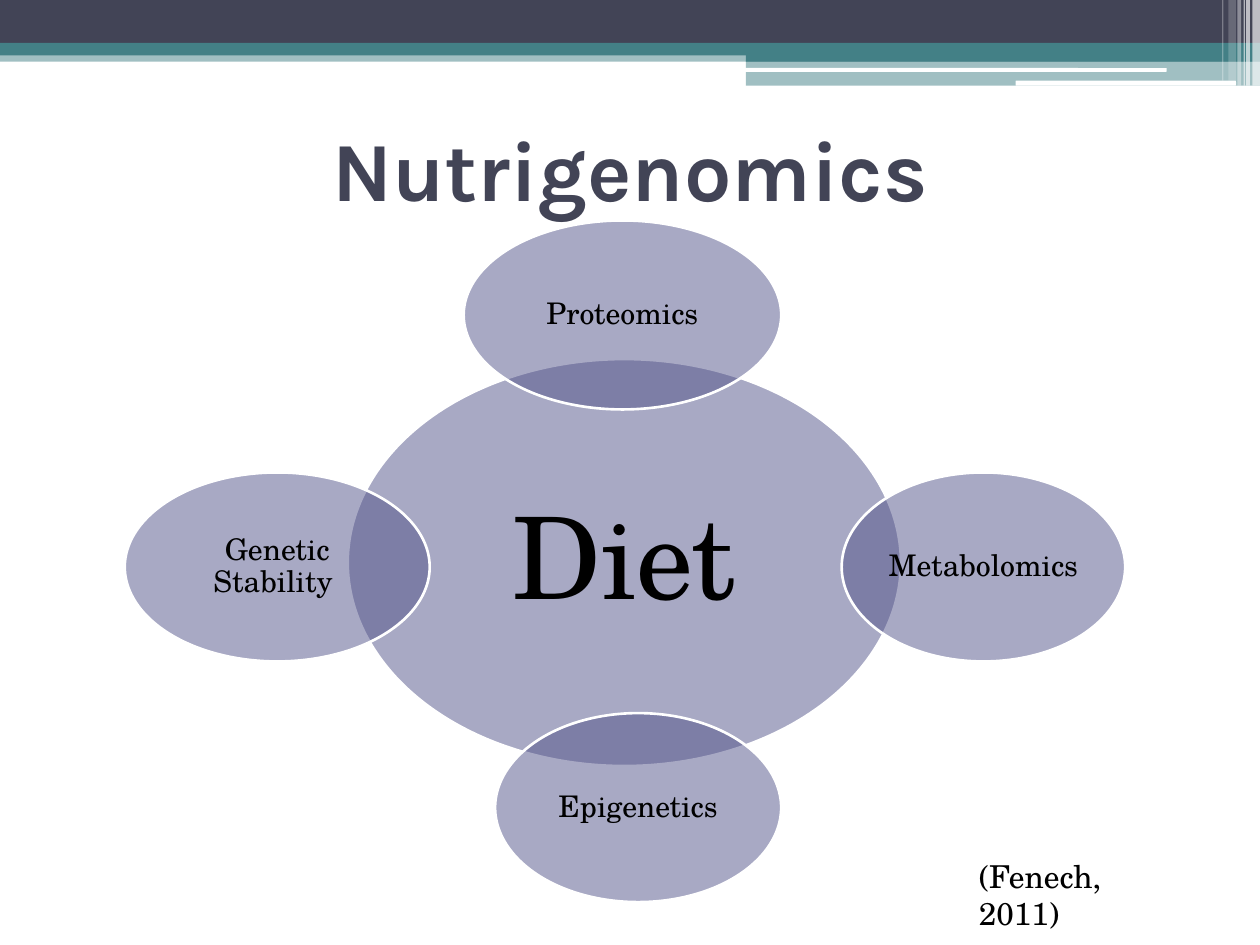
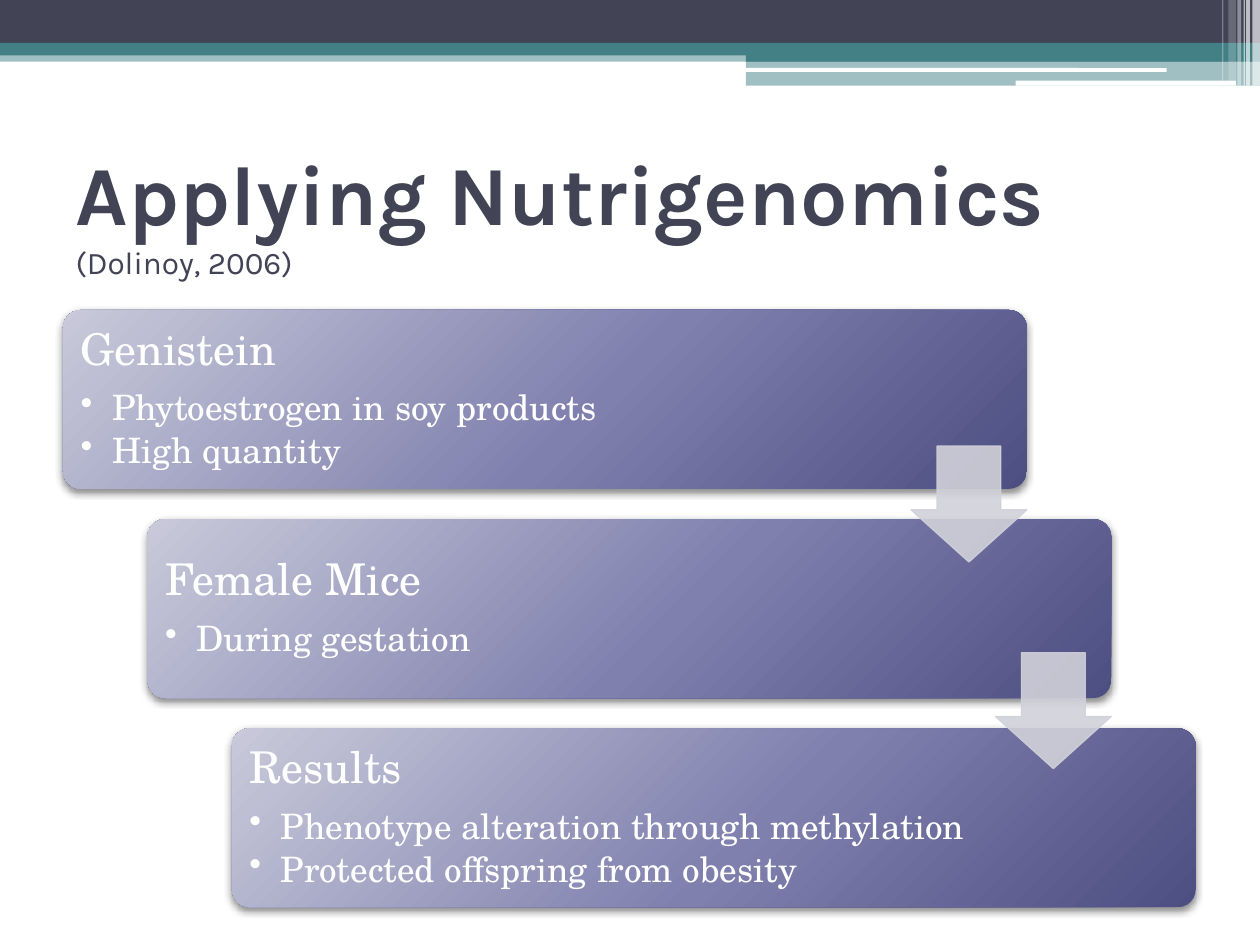
from dataclasses import dataclass

from pptx import Presentation
from pptx.dml.color import RGBColor
from pptx.enum.shapes import MSO_SHAPE
from pptx.enum.text import MSO_ANCHOR, MSO_AUTO_SIZE, PP_ALIGN
from pptx.oxml import parse_xml
from pptx.oxml.ns import nsdecls, qn
from pptx.util import Inches, Pt


@dataclass(frozen=True)
class Theme:
    dark: str = "424456"
    teal: str = "438086"
    white: str = "FFFFFF"
    black: str = "000000"
    violet: str = "53548A"
    arrow: str = "D1D1DA"
    blend: tuple = ((0, "C9C9DA"), (55, "7F80AE"), (100, "4D4E81"))
    head: str = "Karla"
    body: str = "TeX Gyre Schola"
    title: int = 48
    hub: int = 65
    orbit: int = 17
    note: int = 18
    card: int = 25
    point: int = 20


class Deck:
    def __init__(self, theme):
        self.theme = theme
        self.show = Presentation()
        self.show.slide_width = Inches(10)
        self.show.slide_height = Inches(7.5)
        self.layout = self.show.slide_layouts[5]
        self.slide = None

    def begin(self):
        self.slide = self.show.slides.add_slide(self.layout)

    def paint(self, shape, fill, tone, alpha=100):
        fill.solid()
        fill.fore_color.rgb = RGBColor.from_string(tone)
        if alpha < 100:
            color = list(shape._element.spPr.iter(qn("a:srgbClr")))[-1]
            color.append(parse_xml(f'<a:alpha {nsdecls("a")} val="{alpha * 1000}"/>'))

    def shape(self, kind, box, tone, alpha=100):
        item = self.slide.shapes.add_shape(kind, *map(Inches, box))
        item.shadow.inherit = False
        self.paint(item, item.fill, tone, alpha)
        item.line.fill.background()
        return item

    def edge(self, item, tone, width, alpha=100):
        self.paint(item, item.line.fill, tone, alpha)
        item.line.width = Pt(width)

    def bands(self):
        t = self.theme
        flat, round_ = MSO_SHAPE.RECTANGLE, MSO_SHAPE.ROUNDED_RECTANGLE
        rows = [
            (flat, (0, 0.4, 10, 0.09), t.teal, 50),
            (flat, (0, 0, 10, 0.34), t.dark, 100),
            (flat, (0, 0.34, 10, 0.1), t.teal, 100),
            (flat, (5.92, 0.39, 4.08, 0.1), t.teal, 100),
            (flat, (5.92, 0.48, 4.08, 0.2), t.teal, 50),
            (round_, (5.91, 0.54, 3.35, 0.03), t.white, 100),
            (round_, (8.06, 0.64, 1.75, 0.04), t.white, 100),
        ]
        stripes = [
            (9.94, 0.06, 0.68, 65), (9.89, 0.03, 0.68, 65), (9.87, 0.01, 0.68, 60),
            (9.82, 0.03, 0.68, 40), (9.75, 0.06, 0.64, 20), (9.7, 0.01, 0.64, 30),
        ]
        rows += [(flat, (x, 0, w, h), t.white, a) for x, w, h, a in stripes]
        for mark, row in enumerate(rows, 100):
            node = self.shape(*row)._element
            node.nvSpPr.cNvPr.set("id", str(mark))
            self.layout.shapes._spTree.append(node)

    def text(self, para, words, size, tone, font=None, bold=False):
        run = para.add_run()
        run.text = words
        run.font.name = font or self.theme.body
        run.font.size = Pt(size)
        run.font.bold = bold
        run.font.color.rgb = RGBColor.from_string(tone)

    def title(self, top, words, align, cite=None):
        t = self.theme
        item = self.slide.shapes.title
        item.left, item.top, item.width, item.height = map(Inches, (0.5, top, 9, 1.17))
        frame = item.text_frame
        frame.auto_size = MSO_AUTO_SIZE.NONE
        frame.vertical_anchor = MSO_ANCHOR.MIDDLE
        para = frame.paragraphs[0]
        para.alignment = align
        self.text(para, words, t.title, t.dark, t.head, True)
        if cite:
            para = frame.add_paragraph()
            para.alignment = align
            self.text(para, cite, t.note, t.dark, t.head)

    def frame(self, item, pad, right=None):
        frame = item.text_frame
        frame.word_wrap = True
        frame.vertical_anchor = MSO_ANCHOR.MIDDLE
        frame.margin_left = frame.margin_top = frame.margin_bottom = Inches(pad)
        frame.margin_right = Inches(right or pad)
        return frame

    def oval(self, box, words, size, pad=0.02):
        t = self.theme
        item = self.shape(MSO_SHAPE.OVAL, box, t.violet, 50)
        self.edge(item, t.white, 1.5)
        para = self.frame(item, pad).paragraphs[0]
        para.alignment = PP_ALIGN.CENTER
        para.line_spacing = 0.9
        self.text(para, words, size, t.black)

    def note(self, box, words):
        item = self.slide.shapes.add_textbox(*map(Inches, box))
        item.text_frame.word_wrap = True
        self.text(item.text_frame.paragraphs[0], words, self.theme.note, self.theme.black)

    def blend(self, item):
        stops = "".join(
            f'<a:gs pos="{at * 1000}"><a:srgbClr val="{tone}"/></a:gs>'
            for at, tone in self.theme.blend
        )
        props = item._element.spPr
        props.replace(props.find(qn("a:solidFill")), parse_xml(
            f'<a:gradFill {nsdecls("a")} rotWithShape="1"><a:gsLst>{stops}</a:gsLst>'
            '<a:path path="circle"><a:fillToRect l="-40000" t="-90000" '
            'r="140000" b="190000"/></a:path></a:gradFill>'))

    def shade(self, item):
        item._element.spPr.find(qn("a:effectLst")).append(parse_xml(
            f'<a:outerShdw {nsdecls("a")} blurRad="{Pt(4)}" dist="{Pt(2)}" '
            f'dir="5400000" rotWithShape="0"><a:srgbClr val="{self.theme.black}">'
            '<a:alpha val="45000"/></a:srgbClr></a:outerShdw>'))

    def card(self, box, head, points):
        t = self.theme
        item = self.shape(MSO_SHAPE.ROUNDED_RECTANGLE, box, t.violet)
        item.adjustments[0] = 0.1
        self.blend(item)
        self.shade(item)
        frame = self.frame(item, 0.1, 1.5)
        para = frame.paragraphs[0]
        para.space_after = Pt(9)
        self.text(para, head, t.card, t.white)
        for point in points:
            para = frame.add_paragraph()
            para.level = 1
            para.space_after = Pt(3)
            self.text(para, point, t.point, t.white)
            props = para._p.get_or_add_pPr()
            props.set("marL", str(Inches(0.25)))
            props.set("indent", str(-Inches(0.25)))
            props.append(parse_xml(f'<a:buChar {nsdecls("a")} char="•"/>'))
        for para in frame.paragraphs:
            para.alignment = PP_ALIGN.LEFT
            para.line_spacing = 0.9

    def arrow(self, box):
        tone = self.theme.arrow
        item = self.shape(MSO_SHAPE.DOWN_ARROW, box, tone, 90)
        item.adjustments[0] = 0.55
        item.adjustments[1] = 0.45
        self.edge(item, tone, 0.75, 90)


def diet(deck):
    deck.begin()
    deck.bands()
    deck.title(0.75, "Nutrigenomics", PP_ALIGN.CENTER)
    deck.oval((2.76, 2.85, 4.39, 3.23), "Diet", deck.theme.hub, 0.09)
    orbits = [
        (3.68, 1.75, 2.52, "Proteomics"),
        (6.68, 3.75, 2.25, "Metabolomics"),
        (3.93, 5.66, 2.27, "Epigenetics"),
        (0.99, 3.75, 2.42, "Genetic Stability "),
    ]
    for left, top, width, words in orbits:
        deck.oval((left, top, width, 1.5), words, deck.theme.orbit)
    deck.note((7.67, 6.75, 1.84, 0.4), "(Fenech, 2011)")


def steps(deck):
    deck.begin()
    deck.title(1.09, "Applying Nutrigenomics", PP_ALIGN.LEFT, "(Dolinoy, 2006)")
    cards = [
        ("Genistein", ["Phytoestrogen in soy products", "High quantity"]),
        ("Female Mice", ["During gestation"]),
        ("Results", ["Phenotype alteration through methylation",
                     "Protected offspring from obesity"]),
    ]
    for i, (head, points) in enumerate(cards):
        deck.card((0.5 + 0.67 * i, 2.46 + 1.66 * i, 7.65, 1.42), head, points)
    for i in range(len(cards) - 1):
        deck.arrow((7.23 + 0.67 * i, 3.54 + 1.64 * i, 0.92, 0.92))


def main():
    deck = Deck(Theme())
    diet(deck)
    steps(deck)
    deck.show.save("out.pptx")


if __name__ == "__main__":
    main()
